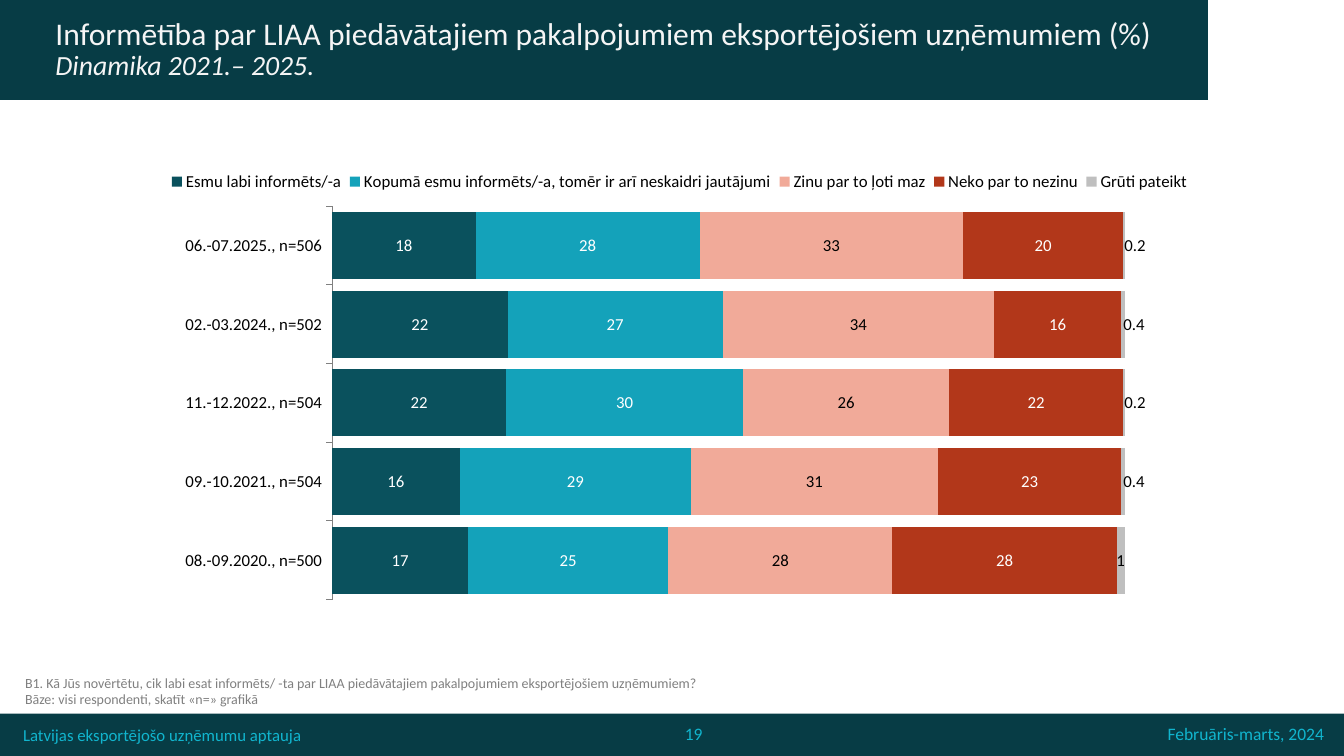
from lxml import etree
from pptx import Presentation
from pptx.chart.data import CategoryChartData
from pptx.dml.color import RGBColor
from pptx.enum.chart import XL_CHART_TYPE as CT, XL_LABEL_POSITION as LP
from pptx.enum.chart import XL_LEGEND_POSITION as LEG, XL_TICK_LABEL_POSITION as TL
from pptx.enum.chart import XL_TICK_MARK as TICK
from pptx.enum.shapes import MSO_SHAPE as SHAPE
from pptx.enum.text import MSO_ANCHOR as ANCHOR, PP_ALIGN as ALIGN
from pptx.oxml import parse_xml
from pptx.oxml.ns import nsdecls, qn
from pptx.util import Pt

PX = 9144  # 100 px to the inch
COLORS = {
    "band": "073C45", "footer": "11B5CE", "title": "F5F5F5", "grey": "808080",
    "black": "000000", "white": "FFFFFF", "well": "0A515D", "overall": "14A2BA",
    "little": "F1AA99", "nothing": "B2371A", "unsure": "BFBFBF",
}
WAVES = ["06.-07.2025., n=506", "02.-03.2024., n=502", "11.-12.2022., n=504",
         "09.-10.2021., n=504", "08.-09.2020., n=500"]
ANSWERS = [  # name, values, fill, label colour
    ("Esmu labi informēts/-a", [18, 22, 22, 16, 17], "well", "white"),
    ("Kopumā esmu informēts/-a, tomēr ir arī neskaidri jautājumi",
     [28, 27, 30, 29, 25], "overall", "white"),
    ("Zinu par to ļoti maz", [33, 34, 26, 31, 28], "little", "black"),
    ("Neko par to nezinu", [20, 16, 22, 23, 28], "nothing", "white"),
    ("Grūti pateikt", [0.2, 0.4, 0.2, 0.4, 1], "unsure", "black"),
]


def rgb(name):
    return RGBColor.from_string(COLORS[name])


def set_layout(parent, index, **values):
    """Give a chart part a manual layout; keys name the layout's children."""
    for old in parent.findall(qn("c:layout")):
        parent.remove(old)
    items = "".join(f'<c:{k} val="{v}"/>' for k, v in values.items())
    parent.insert(index, parse_xml(
        f'<c:layout {nsdecls("c")}><c:manualLayout>{items}</c:manualLayout></c:layout>'))


class SlideBuilder:
    font = "Calibri"

    def __init__(self, prs):
        self.s = prs.slides.add_slide(prs.slide_layouts[5])

    def style(self, font, size, color, italic=None):
        font.name, font.size, font.italic = self.font, Pt(size), italic
        font.color.rgb = rgb(color)

    def run(self, p, text, size, color, italic=None):
        r = p.add_run()
        r.text = text
        self.style(r.font, size, color, italic)

    def band(self, x, y, w, h):
        sp = self.s.shapes.add_shape(SHAPE.RECTANGLE, x * PX, y * PX, w * PX, h * PX)
        sp.shadow.inherit = False
        sp.fill.solid()
        sp.fill.fore_color.rgb = rgb("band")
        sp.line.fill.background()

    def title(self, x, y, w, h, text, subtitle):
        sp = self.s.shapes.title
        sp.left, sp.top, sp.width, sp.height = x * PX, y * PX, w * PX, h * PX
        sp.element.getparent().append(sp.element)  # in front of the band
        tf = sp.text_frame
        tf.word_wrap, tf.vertical_anchor = True, ANCHOR.MIDDLE
        p = tf.paragraphs[0]
        p.alignment, p.line_spacing = ALIGN.LEFT, 0.9
        self.run(p, text, 22.5, "title")
        p.add_line_break()
        self.run(p, subtitle, 19.8, "title", True)

    def text(self, x, y, w, h, lines, size, color, align=ALIGN.LEFT,
             anchor=ANCHOR.MIDDLE, spacing=None):
        tf = self.s.shapes.add_textbox(x * PX, y * PX, w * PX, h * PX).text_frame
        tf.word_wrap, tf.vertical_anchor = True, anchor
        for i, line in enumerate(lines):
            p = tf.add_paragraph() if i else tf.paragraphs[0]
            p.alignment, p.line_spacing = align, spacing
            self.run(p, line, size, color)

    def series(self, ser, fill, label_color):
        """Colour a series and move the labels of its slivers beside the bar."""
        ser.format.fill.solid()
        ser.format.fill.fore_color.rgb = rgb(fill)
        labels = ser.data_labels
        labels.show_value, labels.position = True, LP.CENTER
        labels.number_format, labels.number_format_is_linked = "#,##0", False
        self.style(labels.font, 12, label_color)
        for i, value in enumerate(ser.values):
            if value < 1:
                label = ser.points[i].data_label
                self.style(label.font, 12, label_color)
                label.position = LP.CENTER
        for dlbl in ser._element.iter(qn("c:dLbl")):
            set_layout(dlbl, 1, x=0.01, y=0)
            fmt = etree.Element(qn("c:numFmt"), formatCode="0.0", sourceLinked="0")
            dlbl.insert(2, fmt)

    def chart(self, x, y, w, h):
        data = CategoryChartData()
        data.categories = WAVES
        for name, values, _, _ in ANSWERS:
            data.add_series(name, values)
        chart = self.s.shapes.add_chart(CT.BAR_STACKED_100, x * PX, y * PX,
                                        w * PX, h * PX, data).chart
        self.style(chart.font, 12, "black")
        chart.has_title = False
        chart.has_legend = True
        chart.legend.position, chart.legend.include_in_layout = LEG.TOP, False
        self.style(chart.legend.font, 12, "black")

        axis = chart.category_axis
        axis.reverse_order = True
        axis.major_tick_mark, axis.minor_tick_mark = TICK.OUTSIDE, TICK.NONE
        axis.tick_label_position = TL.LOW
        axis.format.line.color.rgb, axis.format.line.width = rgb("grey"), Pt(0.75)
        self.style(axis.tick_labels.font, 12, "black")
        chart.value_axis.visible = False
        chart.value_axis.has_major_gridlines = False

        plot = chart.plots[0]
        plot.gap_width, plot.overlap, plot.vary_by_categories = 17, 100, False
        for ser, (_, _, fill, label_color) in zip(plot.series, ANSWERS):
            self.series(ser, fill, label_color)

        root = chart.element
        set_layout(root.find(".//" + qn("c:plotArea")), 0, layoutTarget="inner",
                   xMode="edge", yMode="edge", x=0.222, y=0.133, w=0.714, h=0.841)
        set_layout(root.find(".//" + qn("c:legend")), 1,
                   xMode="edge", yMode="edge", x=0.07, y=0.05, w=0.93, h=0.06)


def main():
    prs = Presentation()
    prs.slide_width, prs.slide_height = 1333 * PX, 750 * PX
    b = SlideBuilder(prs)
    b.band(0, 708, 1333, 42)
    b.text(554, 708, 268, 42, ["19"], 12.5, "footer", ALIGN.CENTER, spacing=0.9)
    b.text(13, 708, 509, 42, ["Latvijas eksportējošo uzņēmumu aptauja"], 12, "footer")
    b.text(1139, 708, 184, 42, ["Februāris-marts, 2024"], 12.5, "footer",
           ALIGN.RIGHT, spacing=0.9)
    b.band(0, 0, 1198, 99)
    b.title(45, 0, 1153, 99,
            "Informētība par LIAA piedāvātajiem pakalpojumiem eksportējošiem uzņēmumiem (%)",
            "Dinamika 2021.– 2025.")
    b.text(15, 665, 711, 42,
           ["B1. Kā Jūs novērtētu, cik labi esat informēts/ -ta par LIAA piedāvātajiem "
            "pakalpojumiem eksportējošiem uzņēmumiem?",
            "Bāze: visi respondenti, skatīt «n=» grafikā"],
           10, "grey", anchor=ANCHOR.BOTTOM)
    b.chart(85, 143, 1101, 464)
    prs.save("out.pptx")


if __name__ == "__main__":
    main()
